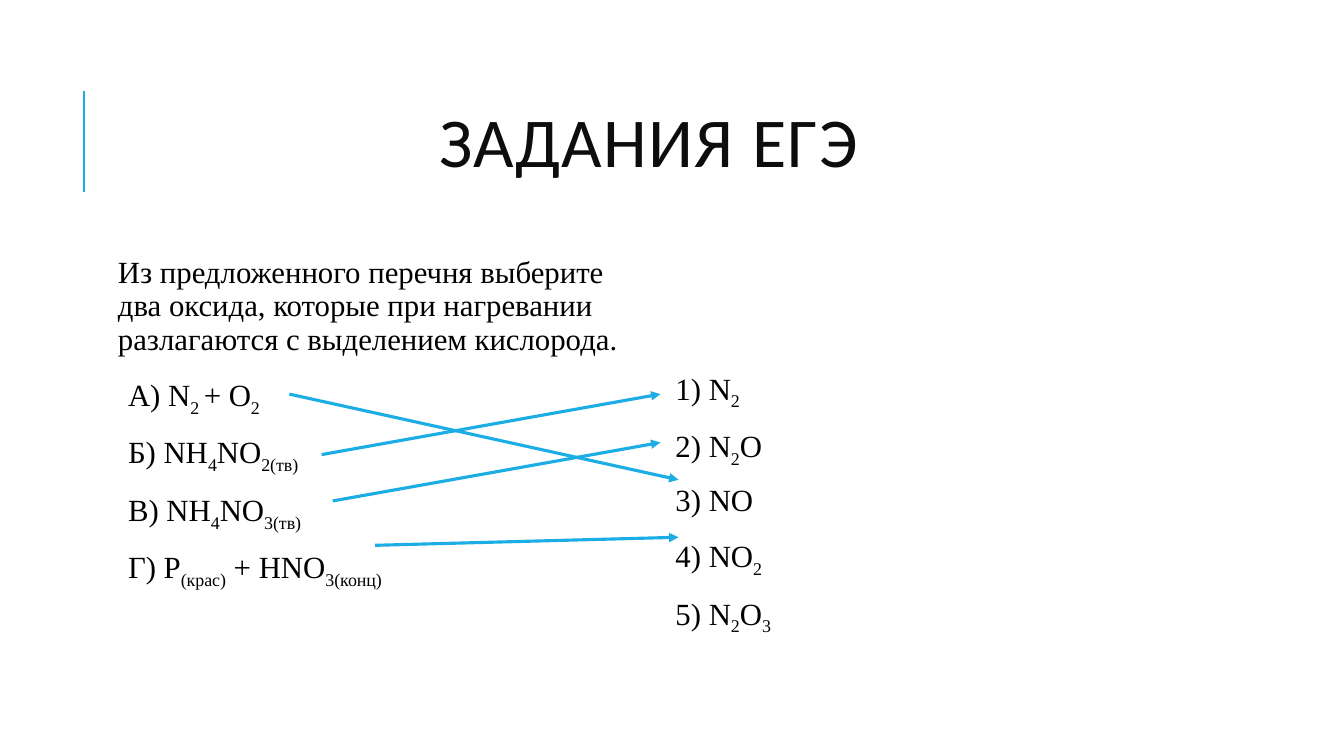
import pptx
import pptx.util
import pptx.dml.color
import pptx.enum.shapes
import pptx.enum.text
import lxml.etree

PX = 9144  # 100 px to the inch
BLUE = "1CADE4"
SERIF = "Times New Roman"
TASK = ("Из предложенного перечня выберите два оксида, которые при нагревании "
        "разлагаются с выделением кислорода.")
LEFT = ["А) N|2 |+ O|2", "Б) NH|4|NO|2(тв)", "В) NH|4|NO|3(тв)",
        "Г) P|(крас)| + HNO|3(конц)"]
RIGHT = ["1) N|2", "2) N|2|O", "3) NO", "4) NO|2", "5) N|2|O|3"]
ARROWS = [(287, 391, 673, 476), (319, 451, 655, 391),
          (330, 497, 655, 439), (372, 541, 673, 533)]


def px(*nums):
    return [pptx.util.Emu(n * PX) for n in nums]


def color(code):
    return pptx.dml.color.RGBColor.from_string(code)


def write(para, text, size=22, font=SERIF, ink="000000", gap=0, indent=0,
          lines=0.9, before=12, after=2, align=None):
    """Fill a paragraph; every second part between bars is a subscript."""
    para.line_spacing = lines
    para.space_before = pptx.util.Pt(before)
    para.space_after = pptx.util.Pt(after)
    para.alignment = align
    props = para._p.get_or_add_pPr()
    props.set("marL", str(indent * PX))
    props.set("indent", "0")
    for i, part in enumerate(text.split("|")):
        run = para.add_run()
        run.text = part
        run.font.name = font
        run.font.size = pptx.util.Pt(size)
        run.font.color.rgb = color(ink)
        mark = run._r.get_or_add_rPr()
        if gap:
            mark.set("spc", str(gap * 100))
        if i % 2:
            mark.set("baseline", "-25000")


def line(slide, ends, width, arrow=False):
    link = slide.shapes.add_connector(
        pptx.enum.shapes.MSO_CONNECTOR.STRAIGHT, *px(*ends))
    link.line.color.rgb = color(BLUE)
    link.line.width = pptx.util.Pt(width)
    if arrow:
        tail = lxml.etree.SubElement(link.line._get_or_add_ln(),
                                     pptx.oxml.ns.qn("a:tailEnd"))
        tail.set("type", "triangle")
    lxml.etree.SubElement(link._element.spPr, pptx.oxml.ns.qn("a:effectLst"))


def head(slide, x, y, w, h):
    line(slide, (x - 29, y + 126, x - 29, y + 26), 1.5)
    title = slide.shapes.title
    title.left, title.top, title.width, title.height = px(x, y, w, h)
    frame = title.text_frame
    frame.vertical_anchor = pptx.enum.text.MSO_ANCHOR.MIDDLE
    write(frame.paragraphs[0], "ЗАДАНИЯ ЕГЭ", size=50, font="Calibri",
          ink="0D0D0D", gap=1, lines=0.8, before=0, after=0,
          align=pptx.enum.text.PP_ALIGN.CENTER)


def column(slide, x, y, w, h, items, intro=None):
    frame = slide.shapes.add_textbox(*px(x, y, w, h)).text_frame
    frame.word_wrap = True
    frame.margin_left, frame.margin_right = px(5, 5)
    frame.margin_top, frame.margin_bottom = px(5, 5)
    rows = [(intro, 0)] if intro else []
    rows += [(item, 10) for item in items]
    for i, (text, indent) in enumerate(rows):
        para = frame.add_paragraph() if i else frame.paragraphs[0]
        write(para, text, indent=indent)


def main():
    deck = pptx.Presentation()
    deck.slide_width, deck.slide_height = px(1333, 750)
    slide = deck.slides.add_slide(deck.slide_layouts[5])
    head(slide, 112, 64, 1063, 164)
    column(slide, 112, 250, 520, 440, LEFT, intro=TASK)
    column(slide, 655, 362, 520, 328, RIGHT)
    for ends in ARROWS:
        line(slide, ends, 2.25, arrow=True)
    deck.save("out.pptx")


if __name__ == "__main__":
    main()
